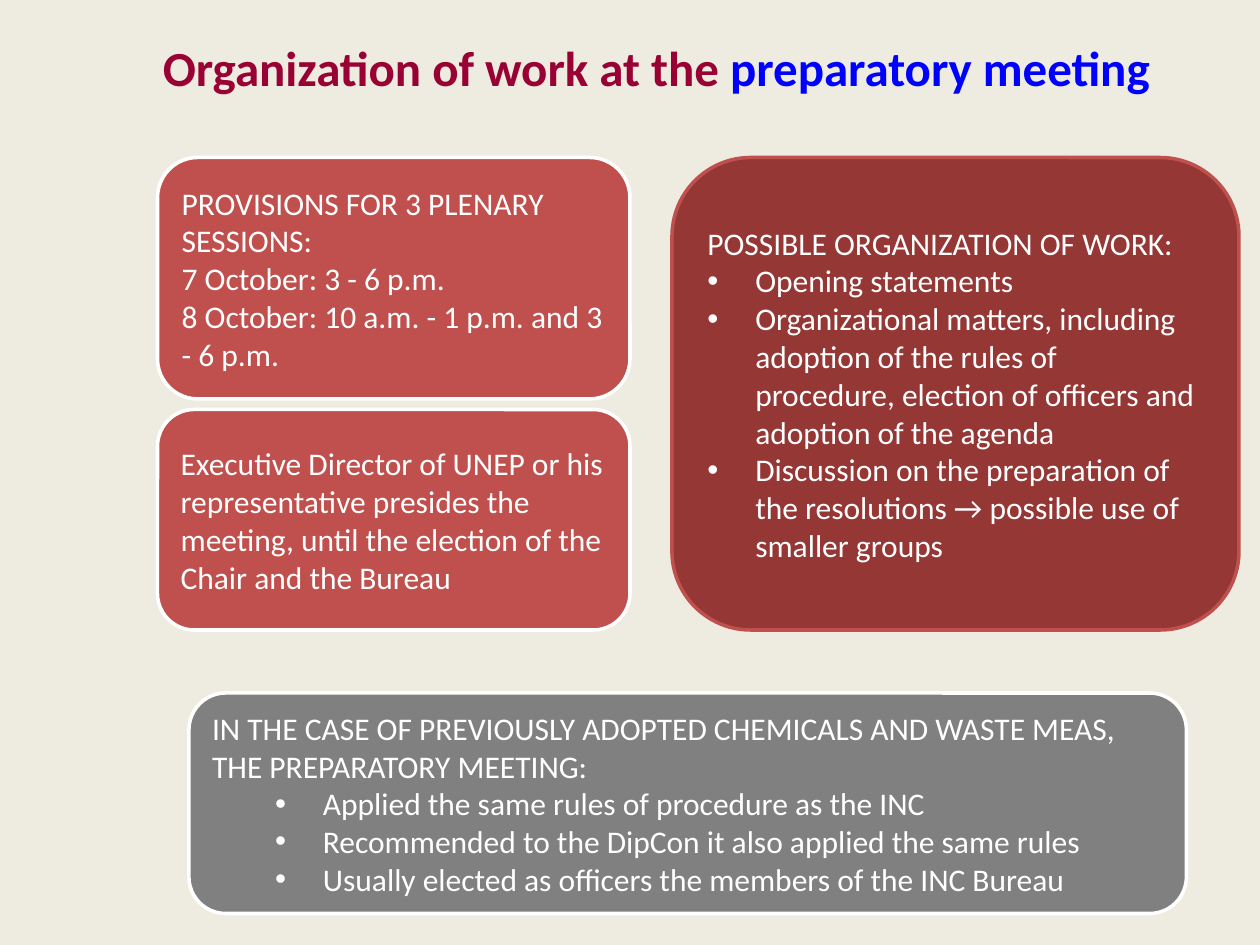
from lxml import etree
from pptx import Presentation
from pptx import util as u
from pptx.dml.color import RGBColor
from pptx.enum import shapes, text
from pptx.oxml.ns import qn

CREAM = RGBColor(0xEE, 0xEC, 0xE1)
WHITE = RGBColor(0xFF, 0xFF, 0xFF)
RED = RGBColor(0xC0, 0x50, 0x4D)
DARK_RED = RGBColor(0x95, 0x37, 0x35)
GRAY = RGBColor(0x80, 0x80, 0x80)
CRIMSON = RGBColor(0x99, 0x00, 0x33)
BLUE = RGBColor(0x00, 0x00, 0xFF)

COLUMNS, ROWS = 120, 90
ROUND = shapes.MSO_SHAPE.ROUNDED_RECTANGLE
PROCESS = shapes.MSO_SHAPE.FLOWCHART_ALTERNATE_PROCESS
HANGING = u.Inches(0.38)
NESTING = u.Inches(0.5)


class SlideBuilder:
    """Places styled elements on a grid of COLUMNS by ROWS."""

    font = "Calibri"
    title_size = u.Pt(28)
    body_size = u.Pt(18)
    line_width = u.Pt(2)

    def __init__(self, deck):
        self.cell_width = deck.slide_width / COLUMNS
        self.cell_height = deck.slide_height / ROWS
        self.page = deck.slides.add_slide(deck.slide_layouts[6])
        self.page.background.fill.solid()
        self.page.background.fill.fore_color.rgb = CREAM

    def area(self, column, row, columns, rows):
        return (round(column * self.cell_width), round(row * self.cell_height),
                round(columns * self.cell_width), round(rows * self.cell_height))

    def span(self, para, words, size, color, bold=False):
        span = para.add_run()
        span.text = words
        span.font.name = self.font
        span.font.size = size
        span.font.bold = bold
        span.font.color.rgb = color

    def title(self, place, parts):
        frame = self.page.shapes.add_textbox(*self.area(*place)).text_frame
        frame.word_wrap = True
        frame.vertical_anchor = text.MSO_ANCHOR.MIDDLE
        para = frame.paragraphs[0]
        para.alignment = text.PP_ALIGN.CENTER
        for words, color in parts:
            self.span(para, words, self.title_size, color, bold=True)

    def bullet(self, para, level):
        """Hang the paragraph on a bullet, nested by its level."""
        para.level = level
        properties = para._p.get_or_add_pPr()
        properties.set("marL", str(HANGING + level * NESTING))
        properties.set("indent", str(-HANGING))
        etree.SubElement(properties, qn("a:buFont")).set("typeface", "Arial")
        etree.SubElement(properties, qn("a:buChar")).set("char", "•")

    def panel(self, place, fill, line, headings, bullets=(), level=0, kind=ROUND):
        box = self.page.shapes.add_shape(kind, *self.area(*place))
        box.shadow.inherit = False
        box.fill.solid()
        box.fill.fore_color.rgb = fill
        box.line.color.rgb = line
        box.line.width = self.line_width
        frame = box.text_frame
        frame.word_wrap = True
        frame.vertical_anchor = text.MSO_ANCHOR.MIDDLE
        for index, words in enumerate([*headings, *bullets]):
            para = frame.add_paragraph() if index else frame.paragraphs[0]
            para.alignment = text.PP_ALIGN.LEFT
            if index >= len(headings):
                self.bullet(para, level)
            self.span(para, words, self.body_size, WHITE)


def main():
    deck = Presentation()
    deck.slide_width, deck.slide_height = u.Inches(10), u.Inches(7.5)
    builder = SlideBuilder(deck)

    builder.title((12, 2.7, 101, 7.4), [
        ("Organization of work at the ", CRIMSON),
        ("preparatory meeting", BLUE),
    ])
    builder.panel((15, 15, 45, 23), RED, WHITE, [
        "PROVISIONS FOR 3 PLENARY SESSIONS:",
        "7 October: 3 - 6 p.m.",
        "8 October: 10 a.m. - 1 p.m. and 3 - 6 p.m.",
    ])
    builder.panel((15, 39, 45, 21), RED, WHITE, [
        "Executive Director of UNEP or his representative presides the "
        "meeting, until the election of the Chair and the Bureau",
    ])
    builder.panel((64, 15, 54, 45), DARK_RED, RED, [
        "POSSIBLE ORGANIZATION OF WORK:",
    ], [
        "Opening statements",
        "Organizational matters, including adoption of the rules of "
        "procedure, election of officers and adoption of the agenda",
        "Discussion on the preparation of the resolutions → possible use "
        "of smaller groups",
    ])
    builder.panel((18, 66, 95, 21), GRAY, WHITE, [
        "IN THE CASE OF PREVIOUSLY ADOPTED CHEMICALS AND WASTE MEAS,",
        "THE PREPARATORY MEETING:",
    ], [
        "Applied the same rules of procedure as the INC",
        "Recommended to the DipCon it also applied the same rules",
        "Usually elected as officers the members of the INC Bureau",
    ], level=1, kind=PROCESS)

    deck.save("out.pptx")


if __name__ == "__main__":
    main()
